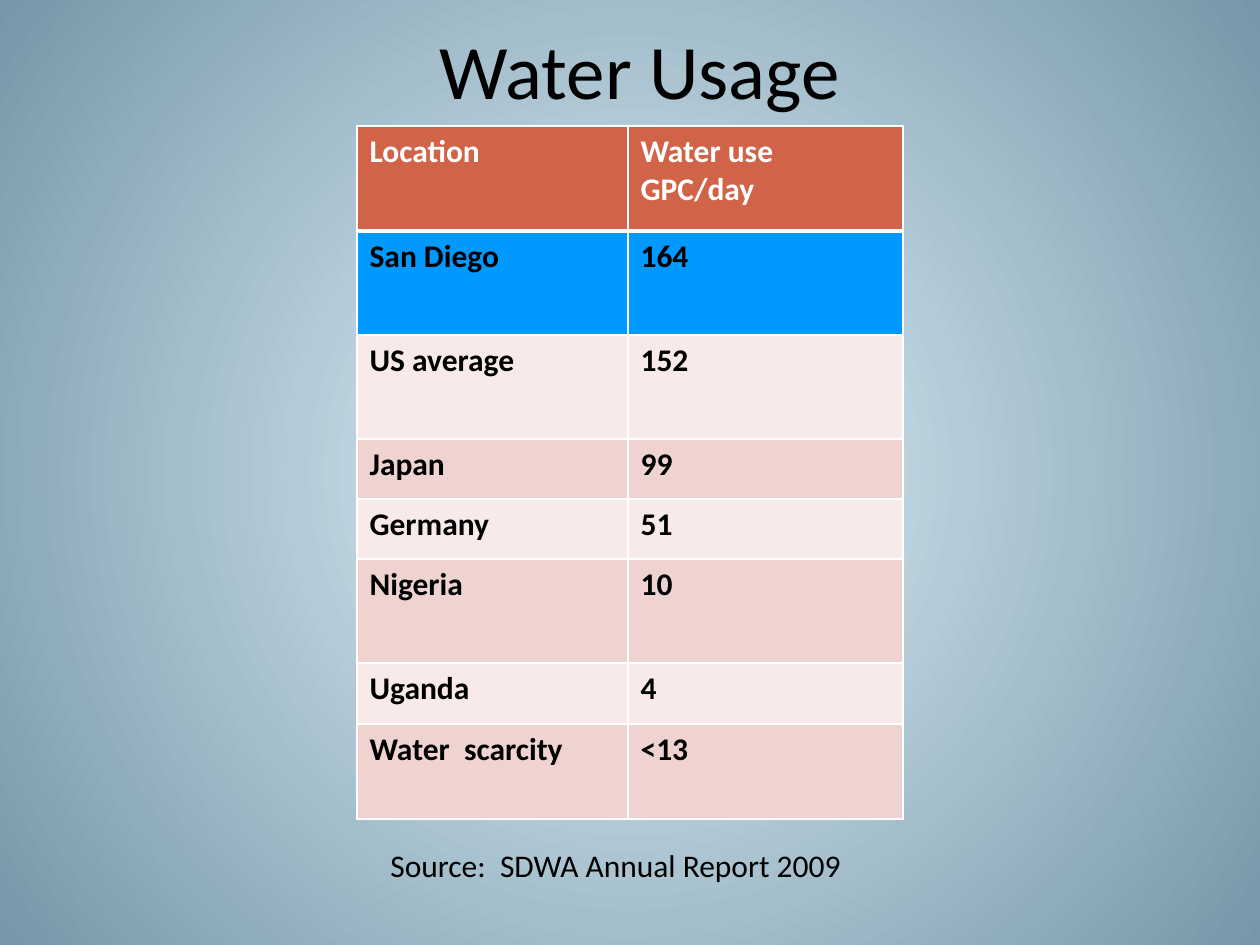
"""Build the Water Usage slide: a title, a table of daily use and its source."""
from lxml import etree
from pptx import Presentation
from pptx.dml.color import RGBColor
from pptx.enum import text
from pptx.oxml.ns import qn
from pptx.util import Pt

PX = 914400 // 126
FONT = "Calibri"
BLACK = RGBColor(0x00, 0x00, 0x00)
WHITE = RGBColor(0xFF, 0xFF, 0xFF)
RUST = RGBColor(0xD1, 0x63, 0x49)
BLUE = RGBColor(0x00, 0x99, 0xFF)
PALE = RGBColor(0xF7, 0xEA, 0xE9)
PINK = RGBColor(0xEE, 0xD3, 0xD0)
GLOW = RGBColor(0xE2, 0xF2, 0xFA)
SLATE = RGBColor(0x76, 0x97, 0xA8)

TITLE = "Water Usage"
SOURCE = "Source:  SDWA Annual Report 2009"
USAGE = [
    ("Location", "Water use\nGPC/day", 105),
    ("San Diego", "164", 104),
    ("US average", "152", 104),
    ("Japan", "99", 60),
    ("Germany", "51", 60),
    ("Nigeria", "10", 104),
    ("Uganda", "4", 61),
    ("Water  scarcity", "<13", 95),
]
COLUMNS = (271, 275)
TABLE_LEFT, TABLE_TOP = 357, 126


def style(p, size, color, bold=False):
    p.font.name, p.font.size, p.font.bold = FONT, Pt(size), bold
    p.font.color.rgb = color


def add_text(slide, box, words, size, align, anchor):
    sp = slide.shapes.add_textbox(*(v * PX for v in box))
    tf = sp.text_frame
    tf.word_wrap, tf.vertical_anchor = True, anchor
    p = tf.paragraphs[0]
    p.text, p.alignment = words, align
    style(p, size, BLACK)


def add_border(cell, side, width):
    ln = etree.SubElement(cell._tc.get_or_add_tcPr(), qn(f"a:ln{side}"), w=str(Pt(width)))
    fill = etree.SubElement(ln, qn("a:solidFill"))
    etree.SubElement(fill, qn("a:srgbClr"), val=str(WHITE))


def paint_background(slide):
    fill = slide.background.fill
    fill.gradient()
    for stop, color in zip(fill.gradient_stops, (GLOW, SLATE)):
        stop.color.rgb = color
    lin = next(slide.background._cSld.iter(qn("a:lin")))
    grad = lin.getparent()
    grad.remove(lin)
    circle = etree.SubElement(grad, qn("a:path"), path="circle")
    etree.SubElement(circle, qn("a:fillToRect"), dict.fromkeys("ltrb", "50000"))


def add_usage_table(slide):
    heights = [row[-1] for row in USAGE]
    size = (sum(COLUMNS) * PX, sum(heights) * PX)
    table = slide.shapes.add_table(
        len(USAGE), len(COLUMNS), TABLE_LEFT * PX, TABLE_TOP * PX, *size).table
    for column, width in zip(table.columns, COLUMNS):
        column.width = width * PX
    fills = [RUST, BLUE] + [(PALE, PINK)[i % 2] for i in range(len(USAGE) - 2)]
    for i, (*words, height) in enumerate(USAGE):
        table.rows[i].height = height * PX
        for cell, value in zip(table.rows[i].cells, words):
            cell.text = value
            for p in cell.text_frame.paragraphs:
                style(p, 18, BLACK if i else WHITE, True)
            for side in "LRTB":
                heavy = (i, side) in ((0, "B"), (1, "T"))
                add_border(cell, side, 3 if heavy else 1)
            cell.fill.solid()
            cell.fill.fore_color.rgb = fills[i]


def main():
    prs = Presentation()
    prs.slide_width, prs.slide_height = 1260 * PX, 945 * PX
    slide = prs.slides.add_slide(prs.slide_layouts[6])
    paint_background(slide)
    add_usage_table(slide)
    add_text(slide, (73, -10, 1134, 158), TITLE, 44,
             text.PP_ALIGN.CENTER, text.MSO_ANCHOR.MIDDLE)
    add_text(slide, (378, 840, 504, 50), SOURCE, 18,
             text.PP_ALIGN.LEFT, text.MSO_ANCHOR.TOP)
    prs.save("out.pptx")


if __name__ == "__main__":
    main()
